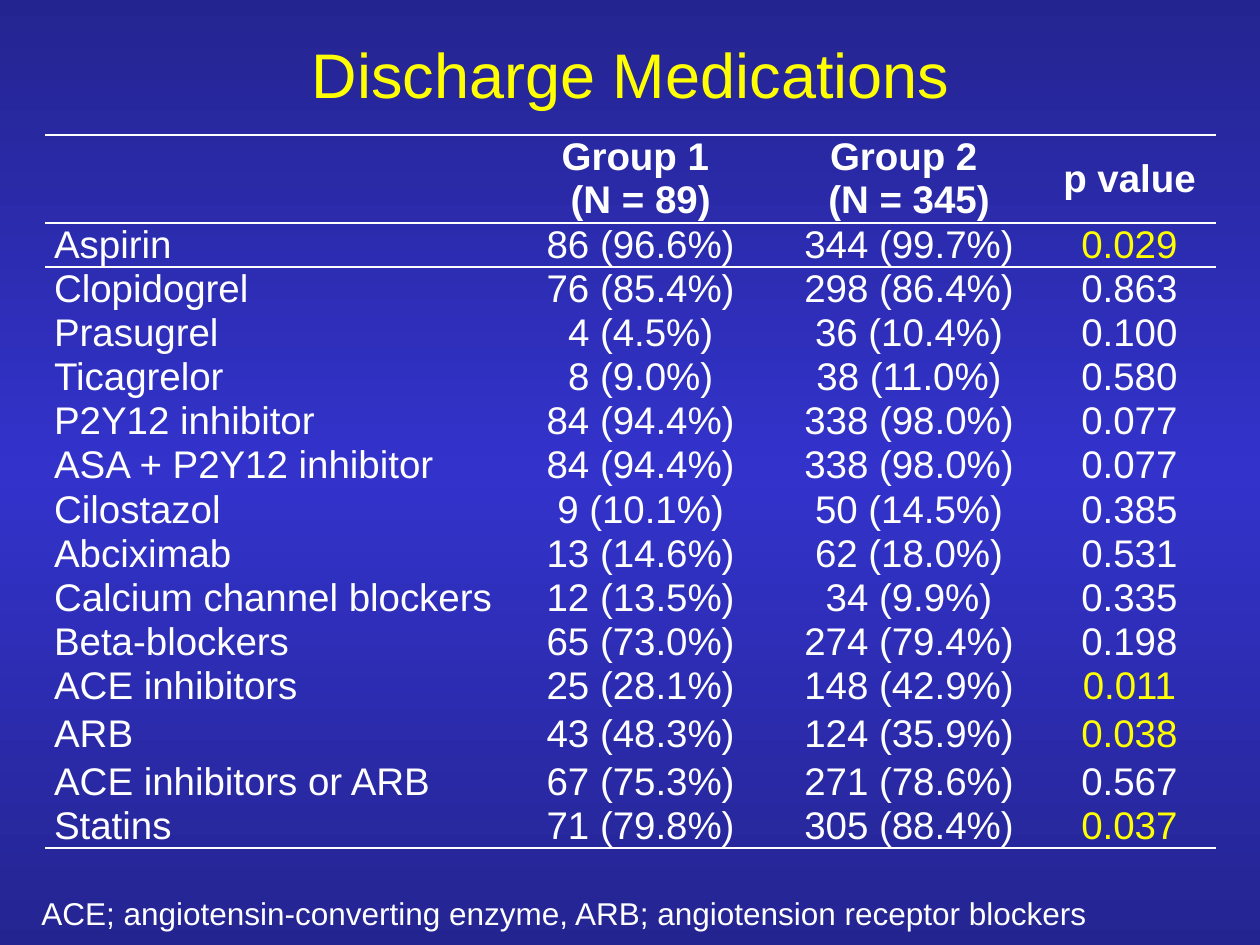
"""Build the discharge medications slide."""
from typing import NamedTuple

from pptx import Presentation
from pptx.dml.color import RGBColor
from pptx.enum.text import MSO_ANCHOR, PP_ALIGN
from pptx.oxml import parse_xml
from pptx.oxml.ns import qn
from pptx.util import Inches, Pt

LEFT, CENTER, JUSTIFY = PP_ALIGN.LEFT, PP_ALIGN.CENTER, PP_ALIGN.JUSTIFY
MIDDLE = MSO_ANCHOR.MIDDLE
COLORS = {"text": "FFFFFF", "accent": "FFFF00", "background": "3333CC"}
FONT = "Arial"
NAMESPACES = (
    'xmlns:a="http://schemas.openxmlformats.org/drawingml/2006/main" '
    'xmlns:p="http://schemas.openxmlformats.org/presentationml/2006/main"'
)
NO_STYLE = "{2D5ABB26-0587-4C30-8999-92F81FD0307C}"
COLUMN_WIDTHS = (3.66, 2.13, 2.13, 1.37)
HEADER_HEIGHT, ROW_HEIGHT, TALL_HEIGHT = 0.7, 0.35, 0.41
HEADERS = ("", "Group 1 \n(N = 89)", "Group 2 \n(N = 345)", "p value")


class Medication(NamedTuple):
    """One table row."""

    name: str
    group_1: str
    group_2: str
    p_value: str


MEDICATIONS = [
    Medication("Aspirin", "86 (96.6%)", "344 (99.7%)", "0.029"),
    Medication("Clopidogrel", "76 (85.4%)", "298 (86.4%)", "0.863"),
    Medication("Prasugrel", "4 (4.5%)", "36 (10.4%)", "0.100"),
    Medication("Ticagrelor", "8 (9.0%)", "38 (11.0%)", "0.580"),
    Medication("P2Y12 inhibitor", "84 (94.4%)", "338 (98.0%)", "0.077"),
    Medication("ASA + P2Y12 inhibitor", "84 (94.4%)", "338 (98.0%)", "0.077"),
    Medication("Cilostazol", "9 (10.1%)", "50 (14.5%)", "0.385"),
    Medication("Abciximab", "13 (14.6%)", "62 (18.0%)", "0.531"),
    Medication("Calcium channel blockers", "12 (13.5%)", "34 (9.9%)", "0.335"),
    Medication("Beta-blockers", "65 (73.0%)", "274 (79.4%)", "0.198"),
    Medication("ACE inhibitors", "25 (28.1%)", "148 (42.9%)", "0.011"),
    Medication("ARB", "43 (48.3%)", "124 (35.9%)", "0.038"),
    Medication("ACE inhibitors or ARB", "67 (75.3%)", "271 (78.6%)", "0.567"),
    Medication("Statins", "71 (79.8%)", "305 (88.4%)", "0.037"),
]


def write_text(text_frame, text: str, *, size: float, color: str = "text",
               bold: bool = False, align=LEFT) -> None:
    """Fill a text frame, one paragraph per line of text."""
    text_frame.text = text
    for paragraph in text_frame.paragraphs:
        paragraph.alignment = align
        font = paragraph.font
        for run in paragraph.runs:
            font = run.font
        font.name, font.size, font.bold = FONT, Pt(size), bold
        font.color.rgb = RGBColor.from_string(COLORS[color])


def set_background(slide) -> None:
    """Give the slide a vertical gradient that is brightest in the middle."""
    color = COLORS["background"]
    dark = f'<a:srgbClr val="{color}"><a:shade val="46275"/></a:srgbClr>'
    bright = f'<a:srgbClr val="{color}"/>'
    stops = "".join(
        f'<a:gs pos="{position}">{stop}</a:gs>'
        for position, stop in ((0, dark), (50000, bright), (100000, dark))
    )
    slide.element.cSld.insert(0, parse_xml(
        f'<p:bg {NAMESPACES}><p:bgPr><a:gradFill rotWithShape="0">'
        f'<a:gsLst>{stops}</a:gsLst><a:lin ang="5400000" scaled="1"/>'
        "</a:gradFill><a:effectLst/></p:bgPr></p:bg>"
    ))


def add_border(cell, side: str) -> None:
    """Draw a white rule on one side of a cell."""
    cell._tc.get_or_add_tcPr().append(parse_xml(
        f'<a:{side} {NAMESPACES} w="{Pt(1.5)}"><a:solidFill>'
        f'<a:srgbClr val="{COLORS["text"]}"/></a:solidFill></a:{side}>'
    ))


def add_medication_table(slide) -> None:
    """Add the table of medications by group."""
    rows = [HEADERS, *MEDICATIONS]
    heights = [HEADER_HEIGHT] + [
        TALL_HEIGHT if medication.name == "ARB" else ROW_HEIGHT
        for medication in MEDICATIONS
    ]
    table = slide.shapes.add_table(
        len(rows), len(COLUMN_WIDTHS), Inches(0.36), Inches(1.07),
        Inches(sum(COLUMN_WIDTHS)), Inches(sum(heights)),
    ).table
    table.first_row = table.horz_banding = False
    table._tbl.tblPr.find(qn("a:tableStyleId")).text = NO_STYLE
    for column, width in zip(table.columns, COLUMN_WIDTHS):
        column.width = Inches(width)
    ruled_rows = (0, 1, len(rows) - 1)
    for row_index, (values, height) in enumerate(zip(rows, heights)):
        table.rows[row_index].height = Inches(height)
        for column_index, value in enumerate(values):
            cell = table.cell(row_index, column_index)
            is_header = row_index == 0
            is_p_value = column_index == 3 and not is_header
            significant = is_p_value and float(value) < 0.05
            write_text(
                cell.text_frame, value, size=22, bold=is_header,
                color="accent" if significant else "text",
                align=CENTER if column_index else JUSTIFY,
            )
            cell.vertical_anchor = MIDDLE
            cell.margin_left = cell.margin_right = Inches(0.07)
            cell.margin_top = cell.margin_bottom = 0
            if row_index <= 1:
                add_border(cell, "lnT")
            if row_index in ruled_rows:
                add_border(cell, "lnB")
            cell.fill.background()


def main() -> None:
    """Build and save the presentation."""
    presentation = Presentation()
    presentation.slide_width, presentation.slide_height = Inches(10), Inches(7.5)
    slide = presentation.slides.add_slide(presentation.slide_layouts[5])
    set_background(slide)

    title = slide.shapes.title
    title.left, title.top = Inches(0.51), Inches(0.16)
    title.width, title.height = Inches(8.99), Inches(0.84)
    title.text_frame.vertical_anchor = MIDDLE
    write_text(title.text_frame, "Discharge Medications", size=36,
               color="accent", align=CENTER)

    add_medication_table(slide)

    footnote = slide.shapes.add_textbox(
        Inches(0.23), Inches(7.05), Inches(9.38), Inches(0.4))
    footnote.text_frame.word_wrap = True
    write_text(
        footnote.text_frame,
        "ACE; angiotensin-converting enzyme, ARB; angiotension receptor blockers",
        size=18,
    )
    presentation.save("out.pptx")


if __name__ == "__main__":
    main()
